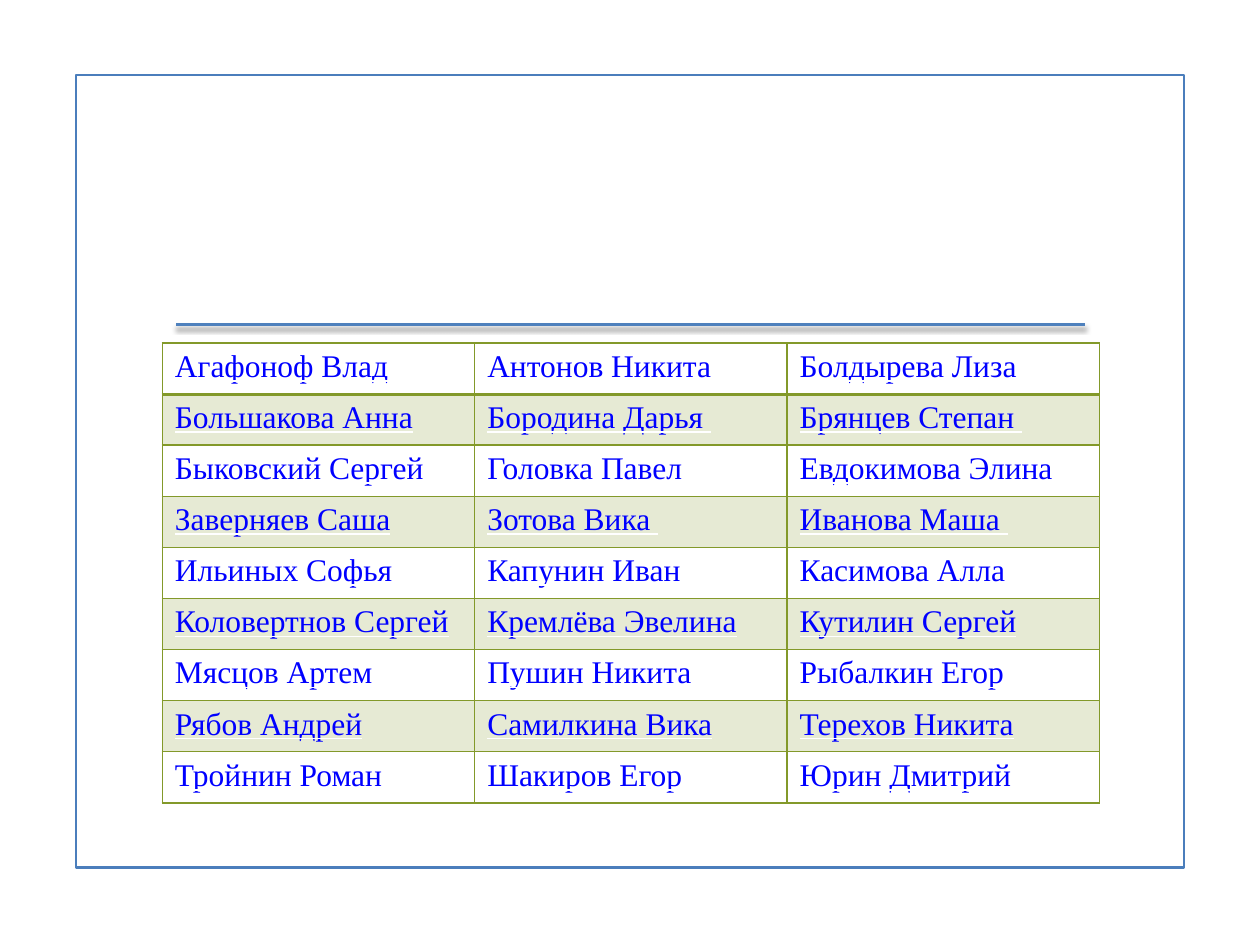
import pptx
import pptx.util
import pptx.dml.color
import pptx.enum.shapes
import pptx.oxml
import pptx.oxml.ns
from lxml import etree

Pt = pptx.util.Pt
NS = pptx.oxml.ns.nsdecls("a")
FONT = "Times New Roman"
COLORS = {"frame": "4B7EBC", "rule": "4F81BD", "grid": "83992A",
          "name": "0000FF", "under": "FFFFFF", "shade": "000000"}
NAMES = [
    ["Агафоноф Влад", "Антонов Никита ", "Болдырева Лиза "],
    ["Большакова Анна", "Бородина Дарья ", "Брянцев Степан "],
    ["Быковский Сергей", "Головка Павел ", "Евдокимова Элина "],
    ["Заверняев Саша", "Зотова Вика ", "Иванова Маша "],
    ["Ильиных Софья", "Капунин Иван", "Касимова Алла "],
    ["Коловертнов Сергей", "Кремлёва Эвелина", "Кутилин Сергей"],
    ["Мясцов Артем", "Пушин Никита", "Рыбалкин Егор"],
    ["Рябов Андрей", "Самилкина Вика", "Терехов Никита"],
    ["Тройнин Роман", "Шакиров Егор", "Юрин Дмитрий"],
]


def color(key):
    return pptx.dml.color.RGBColor.from_string(COLORS[key])


def add_frame(slide, left, top, width, height):
    kind = pptx.enum.shapes.MSO_SHAPE.RECTANGLE
    frame = slide.shapes.add_shape(kind, Pt(left), Pt(top), Pt(width), Pt(height))
    frame.shadow.inherit = False
    frame.fill.background()
    frame.line.color.rgb = color("frame")
    frame.line.width = Pt(1.25)


def add_rule(slide, left, top, width):
    kind = pptx.enum.shapes.MSO_CONNECTOR.STRAIGHT
    rule = slide.shapes.add_connector(kind, Pt(left), Pt(top), Pt(left + width), Pt(top))
    rule.line.color.rgb = color("rule")
    rule.line.width = Pt(2)
    rule._element.spPr.append(pptx.oxml.parse_xml(
        f'<a:effectLst {NS}><a:outerShdw blurRad="{Pt(3.1)}" dist="{Pt(1.6)}" '
        f'dir="5400000" rotWithShape="0"><a:srgbClr val="{COLORS["shade"]}">'
        '<a:alpha val="38000"/></a:srgbClr></a:outerShdw></a:effectLst>'))


def set_edge(cell, side, width):
    cell._tc.get_or_add_tcPr().append(pptx.oxml.parse_xml(
        f'<a:{side} {NS} w="{Pt(width)}"><a:solidFill>'
        f'<a:srgbClr val="{COLORS["grid"]}"/></a:solidFill></a:{side}>'))


def set_fill(cell, banded):
    if not banded:
        cell.fill.background()
        return
    cell.fill.solid()
    cell.fill.fore_color.rgb = color("grid")
    tint = cell._tc.tcPr.find(".//{*}solidFill[last()]/{*}srgbClr")
    tint = cell._tc.tcPr.find("{*}solidFill/{*}srgbClr")
    etree.SubElement(tint, pptx.oxml.ns.qn("a:alpha"), val="20000")


def set_name(cell, name):
    cell.text_frame.text = name
    run = cell.text_frame.paragraphs[0].runs[0]
    run.font.size = Pt(18)
    run.font.name = FONT
    run.font.underline = True
    run.font.color.rgb = color("name")
    latin = run._r.rPr.find(pptx.oxml.ns.qn("a:latin"))
    latin.addprevious(pptx.oxml.parse_xml(
        f'<a:uFill {NS}><a:solidFill><a:srgbClr val="{COLORS["under"]}"/>'
        '</a:solidFill></a:uFill>'))


def add_names(slide, left, top, width, height):
    rows, cols = len(NAMES), len(NAMES[0])
    table = slide.shapes.add_table(
        rows, cols, Pt(left), Pt(top), Pt(width), Pt(height)).table
    table.first_row = False
    table.horz_banding = False
    for col in table.columns:
        col.width = Pt(width / cols)
    for i, row in enumerate(table.rows):
        row.height = Pt(height / rows)
        edges = {"lnL": 0.96, "lnR": 0.96,
                 "lnT": 1.98 if i == 1 else 0.96,
                 "lnB": 1.98 if i == 0 else 0.96}
        for cell, name in zip(row.cells, NAMES[i]):
            for side, size in edges.items():
                set_edge(cell, side, size)
            set_fill(cell, i % 2 == 1)
            set_name(cell, name)


def main():
    deck = pptx.Presentation()
    deck.slide_width, deck.slide_height = Pt(720), Pt(540)
    slide = deck.slides.add_slide(deck.slide_layouts[6])
    add_frame(slide, 43.5, 42.75, 633, 453)
    add_rule(slide, 100.8, 185.5, 519)
    add_names(slide, 92.75, 196, 535.5, 262.8)
    deck.save("out.pptx")


if __name__ == "__main__":
    main()
